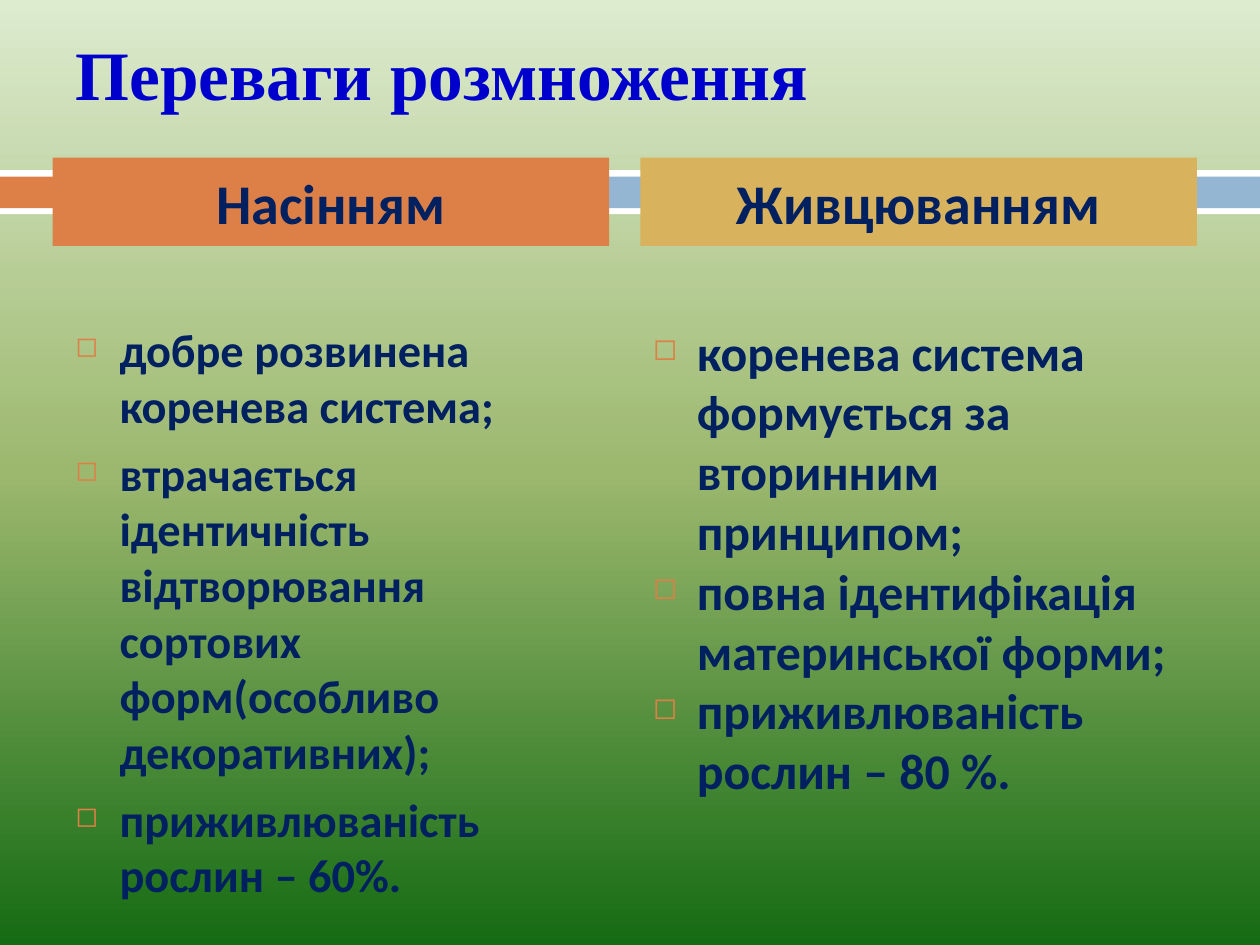
from pptx import Presentation
from pptx.dml.color import RGBColor
from pptx.enum.shapes import MSO_SHAPE
from pptx.enum.text import MSO_ANCHOR, MSO_AUTO_SIZE, PP_ALIGN
from pptx.oxml.ns import qn
from pptx.util import Cm, Pt
from lxml.etree import SubElement

COLORS = {
    "white": "FFFFFF", "orange": "DD8047", "blue": "94B6D2",
    "gold": "D8B25C", "navy": "002060", "title": "0000CC",
}
SKY = [(0, "DDEBCF"), (50, "9CB86E"), (100, "156B13")]


class Deck:
    font = "Calibri"

    def __init__(self, wide, high):
        self.prs = Presentation()
        self.prs.slide_width, self.prs.slide_height = Cm(wide), Cm(high)
        self.slide = self.prs.slides.add_slide(self.prs.slide_layouts[5])

    def backdrop(self, stops):
        """Fill the background with a gradient running downwards."""
        self.slide.background.fill.gradient()
        grad = self.slide._element.find(".//" + qn("a:gradFill"))
        grad.find(qn("a:lin")).set("ang", "5400000")
        group = grad.find(qn("a:gsLst"))
        group.clear()
        for pos, color in stops:
            stop = SubElement(group, qn("a:gs"), pos=str(pos * 1000))
            SubElement(stop, qn("a:srgbClr"), val=color)

    def text(self, para, words, size, color="navy", font=None):
        run = para.add_run()
        run.text = words
        run.font.name = font or self.font
        run.font.size = Pt(size)
        run.font.bold = True
        run.font.color.rgb = RGBColor.from_string(COLORS[color])

    def title(self, words, left, top, width, height):
        shape = self.slide.shapes.title
        shape.left, shape.top = Cm(left), Cm(top)
        shape.width, shape.height = Cm(width), Cm(height)
        frame = shape.text_frame
        frame.auto_size = MSO_AUTO_SIZE.NONE
        frame.vertical_anchor = MSO_ANCHOR.MIDDLE
        frame.margin_bottom = Cm(1.7)
        para = frame.paragraphs[0]
        para.alignment = PP_ALIGN.LEFT
        self.text(para, words, 39.6, "title", "Times New Roman")

    def bar(self, color, left, top, width, height):
        shape = self.slide.shapes.add_shape(
            MSO_SHAPE.RECTANGLE, Cm(left), Cm(top), Cm(width), Cm(height))
        shape.shadow.inherit = False
        shape.fill.solid()
        shape.fill.fore_color.rgb = RGBColor.from_string(COLORS[color])
        shape.line.fill.background()
        return shape

    def head(self, words, color, *box):
        frame = self.bar(color, *box).text_frame
        frame.vertical_anchor = MSO_ANCHOR.MIDDLE
        para = frame.paragraphs[0]
        para.alignment = PP_ALIGN.CENTER
        para.space_before = Pt(7)
        self.text(para, words, 32)

    def bullets(self, items, size, gap, left, top, width, height):
        box = self.slide.shapes.add_textbox(
            Cm(left), Cm(top), Cm(width), Cm(height))
        frame = box.text_frame
        frame.word_wrap = True
        for i, item in enumerate(items):
            para = frame.add_paragraph() if i else frame.paragraphs[0]
            para.space_before = Pt(gap)
            props = para._p.get_or_add_pPr()
            props.set("marL", str(Cm(0.89)))
            props.set("indent", str(-Cm(0.89)))
            tint = SubElement(props, qn("a:buClr"))
            SubElement(tint, qn("a:srgbClr"), val=COLORS["orange"])
            SubElement(props, qn("a:buSzPct"), val="60000")
            SubElement(props, qn("a:buChar"), char="◻")
            self.text(para, item, size)


def main():
    deck = Deck(25.4, 19.05)
    deck.backdrop(SKY)
    deck.bar("white", 0, 3.43, 25.4, 0.89)
    deck.bar("orange", 0, 3.56, 1.48, 0.64)
    deck.bar("blue", 1.65, 3.56, 23.75, 0.64)
    deck.title("Переваги розмноження", 1.27, 1.27, 22.86, 1.98)

    wide = 11.22
    columns = [
        ("Насінням", "orange", 1.06, 1.27, 26.5, 7, [
            "добре розвинена коренева система;",
            "втрачається ідентичність відтворювання сортових "
            "форм(особливо декоративних);",
            "приживлюваність рослин – 60%."]),
        ("Живцюванням", "gold", 12.91, 12.91, 28.5, 0, [
            "коренева система формується за вторинним принципом;",
            "повна ідентифікація материнської форми;",
            "приживлюваність рослин – 80 %."]),
    ]
    for name, color, edge, left, size, gap, items in columns:
        deck.bullets(items, size, gap, left, 6.35, wide, 11.5)
        deck.head(name, color, edge, 3.18, wide, 1.78)
    deck.prs.save("out.pptx")


if __name__ == "__main__":
    main()
